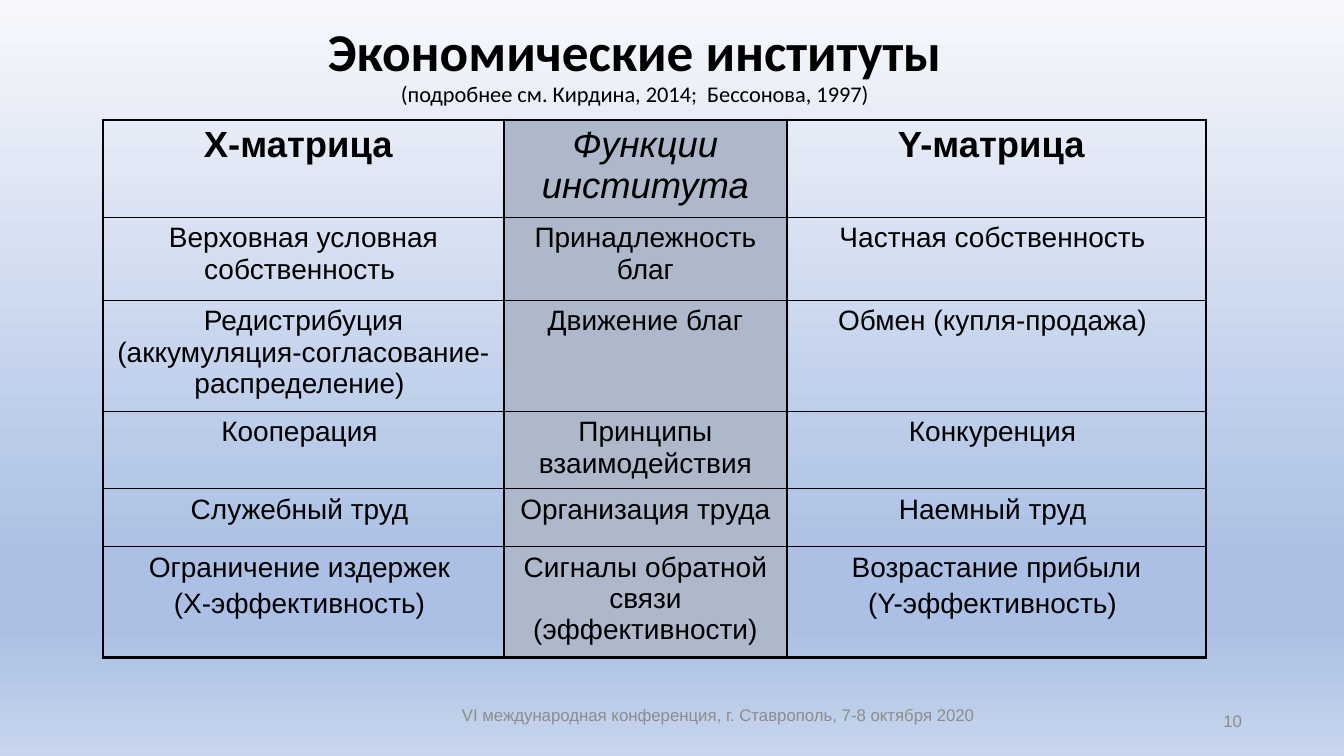
from dataclasses import dataclass

from lxml import etree
from pptx import Presentation
from pptx.dml.color import RGBColor
from pptx.enum.text import MSO_ANCHOR, PP_ALIGN
from pptx.oxml.ns import qn
from pptx.util import Pt

CENTER, RIGHT = PP_ALIGN.CENTER, PP_ALIGN.RIGHT
MIDDLE = MSO_ANCHOR.MIDDLE
EMU_PER_PX = 12192000 / 1344


@dataclass(frozen=True)
class Theme:
    ink: str = "000000"
    muted: str = "8C8C8C"
    function_fill: str = "ADB9CA"
    gradient: tuple = ((0, "F6F8FC"), (74, "ABC0E4"), (83, "ABC0E4"), (100, "C7D5ED"))
    heading_font: str = "Calibri"
    body_font: str = "Arial"
    title_size: int = 38
    subtitle_size: int = 16
    header_size: int = 26
    cell_size: int = 20
    footer_size: int = 12
    outer_line: float = 2.25
    inner_line: float = 1
    paragraph_gap: int = 4


def px(length):
    return round(length * EMU_PER_PX)


def add_span(para, text, *, font, size, color, bold=False, italic=False):
    span = para.add_run()
    span.text = text
    span.font.name = font
    span.font.size = Pt(size)
    span.font.bold = bold
    span.font.italic = italic
    span.font.color.rgb = RGBColor.from_string(color)


class SlideBuilder:
    def __init__(self, page, theme):
        self.page = page
        self.theme = theme

    def background(self):
        fill = self.page.background.fill
        fill.gradient()
        fill.gradient_angle = 270
        stops = next(self.page.element.iter(qn("a:gsLst")))
        for stop in list(stops):
            stops.remove(stop)
        for percent, color in self.theme.gradient:
            stop = etree.SubElement(stops, qn("a:gs"), pos=str(percent * 1000))
            etree.SubElement(stop, qn("a:srgbClr"), val=color)

    def text_para(self, left, top, width, height, align):
        box = self.page.shapes.add_textbox(px(left), px(top), px(width), px(height))
        frame = box.text_frame
        frame.word_wrap = True
        frame.vertical_anchor = MIDDLE
        para = frame.paragraphs[0]
        para.alignment = align
        return para

    def title(self, heading, source, *bounds):
        theme = self.theme
        para = self.text_para(*bounds, CENTER)
        para.line_spacing = 0.9
        add_span(para, heading, font=theme.heading_font, size=theme.title_size,
                 color=theme.ink, bold=True)
        para.add_line_break()
        add_span(para, source, font=theme.heading_font, size=theme.subtitle_size,
                 color=theme.ink)

    def footer(self, text, *bounds, align):
        para = self.text_para(*bounds, align)
        add_span(para, text, font=self.theme.body_font, size=self.theme.footer_size,
                 color=self.theme.muted)

    def borders(self, cell, outer_sides):
        properties = cell._tc.get_or_add_tcPr()
        for index, side in enumerate("LRTB"):
            width = self.theme.outer_line if side in outer_sides else self.theme.inner_line
            line = etree.Element(qn(f"a:ln{side}"), w=str(Pt(width)))
            fill = etree.SubElement(line, qn("a:solidFill"))
            etree.SubElement(fill, qn("a:srgbClr"), val=self.theme.ink)
            properties.insert(index, line)

    def cell(self, cell, text, *, size, bold, italic, fill):
        if fill:
            cell.fill.solid()
            cell.fill.fore_color.rgb = RGBColor.from_string(fill)
        else:
            cell.fill.background()
        frame = cell.text_frame
        for index, line in enumerate(text.split("\n")):
            para = frame.add_paragraph() if index else frame.paragraphs[0]
            para.alignment = CENTER
            if index:
                para.space_before = Pt(self.theme.paragraph_gap)
            add_span(para, line, font=self.theme.body_font, size=size,
                     color=self.theme.ink, bold=bold, italic=italic)

    def table(self, left, top, widths, heights, rows):
        theme = self.theme
        table = self.page.shapes.add_table(
            len(rows), len(widths), px(left), px(top),
            px(sum(widths)), px(sum(heights))).table
        table.horz_banding = False
        table.first_row = False
        for column, width in zip(table.columns, widths):
            column.width = px(width)
        last_row, last_column = len(rows) - 1, len(widths) - 1
        for r, texts in enumerate(rows):
            table.rows[r].height = px(heights[r])
            for c, text in enumerate(texts):
                header, function = r == 0, c == 1
                cell = table.cell(r, c)
                self.cell(cell, text,
                          size=theme.header_size if header else theme.cell_size,
                          bold=header and not function,
                          italic=header and function,
                          fill=theme.function_fill if function else None)
                edges = {"L": c == 0, "R": c == last_column, "T": r == 0, "B": r == last_row}
                self.borders(cell, [side for side, outer in edges.items() if outer])


INSTITUTIONS = [
    ("Х-матрица ", "Функции института", "Y-матрица "),
    ("Верховная условная собственность ", "Принадлежность благ", "Частная собственность "),
    ("Редистрибуция (аккумуляция-согласование-распределение) ", "Движение благ",
     "Обмен (купля-продажа) "),
    ("Кооперация ", "Принципы взаимодействия", "Конкуренция "),
    ("Служебный труд ", "Организация труда", "Наемный труд "),
    ("Ограничение издержек \n(Х-эффективность) ", "Сигналы обратной связи (эффективности)",
     "Возрастание прибыли\n(Y-эффективность) "),
]


def main():
    deck = Presentation()
    deck.slide_width, deck.slide_height = px(1344), px(756)
    page = deck.slides.add_slide(deck.slide_layouts[6])
    builder = SlideBuilder(page, Theme())
    builder.background()
    builder.title("Экономические институты",
                  "(подробнее см. Кирдина, 2014;  Бессонова, 1997)",
                  219, 13, 832, 107)
    builder.footer("VI международная конференция, г. Ставрополь, 7-8 октября 2020",
                   443, 687, 551, 55, align=CENTER)
    builder.footer("10", 950, 701, 302, 40, align=RIGHT)
    builder.table(103, 120, (401, 283, 419), (91, 83, 103, 73, 58, 104), INSTITUTIONS)
    deck.save("out.pptx")


if __name__ == "__main__":
    main()
